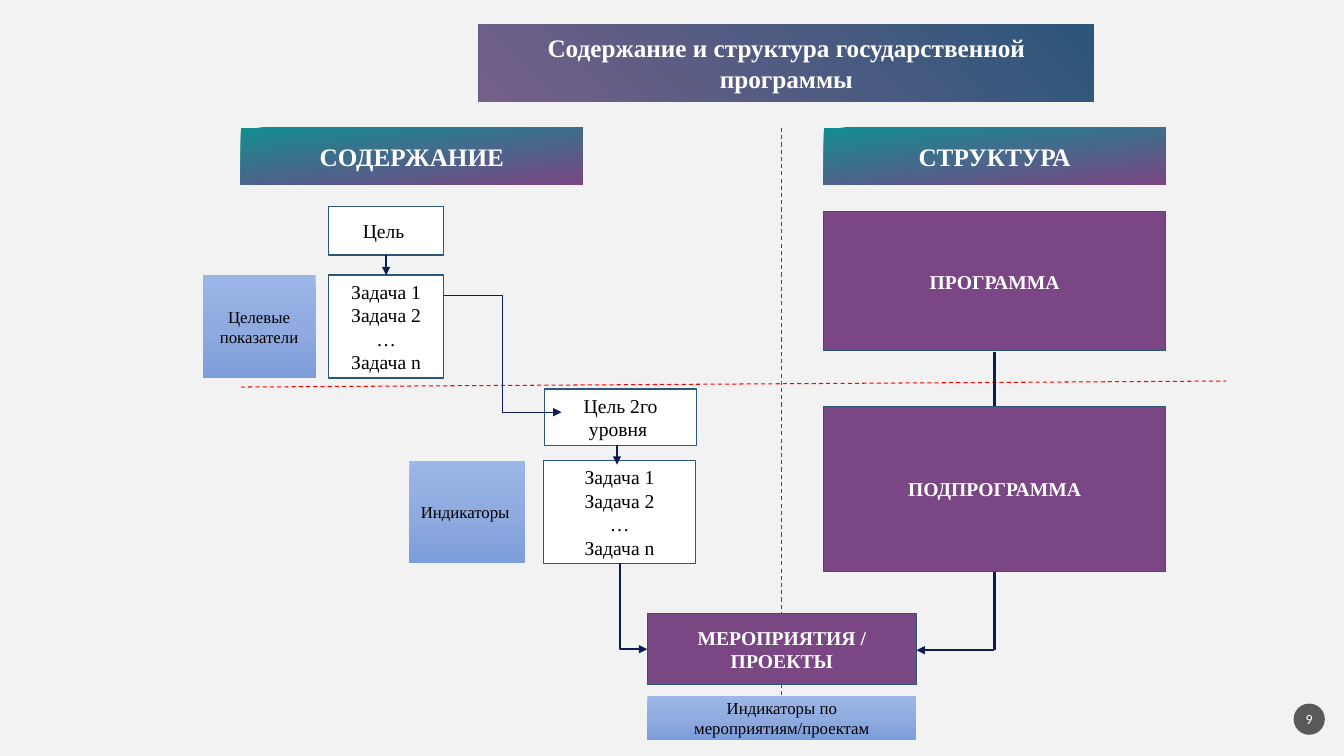
from pptx import Presentation
from pptx import util as u
from pptx.dml.color import RGBColor
from pptx.enum import dml, shapes, text
from pptx.oxml import parse_xml
from pptx.oxml.ns import nsdecls, qn

PX = u.Inches(1) // 100

WHITE = RGBColor(0xFF, 0xFF, 0xFF)
BLACK = RGBColor(0x00, 0x00, 0x00)
PAPER = RGBColor(0xF2, 0xF2, 0xF2)
GREY = RGBColor(0x59, 0x59, 0x59)
RED = RGBColor(0xFF, 0x00, 0x00)
NAVY = RGBColor(0x0D, 0x1D, 0x51)
BLUE = RGBColor(0x2C, 0x56, 0x7A)
PURPLE = RGBColor(0x7A, 0x46, 0x84)
MAUVE = RGBColor(0x74, 0x60, 0x89)
TEAL = RGBColor(0x12, 0x8C, 0x91)
SKY = [RGBColor(0x9D, 0xB6, 0xE8), RGBColor(0x90, 0xAB, 0xDF), RGBColor(0x7C, 0x9E, 0xDB)]

SERIF = "Times New Roman"
HEADING = dict(size=18, color=WHITE, bold=True)
BLOCK = dict(fill=PURPLE, outline=0.5, color=WHITE, bold=True)
TASKS = ["Задача 1", "Задача 2", "…", "Задача n"]


def linear(angle):
    return f'<a:lin ang="{angle * 60000}" scaled="0"/>'


# Gradient: colours at equal steps, plus the direction element
HEADING_FILL = ([TEAL, PURPLE], linear(83))
SKY_FILL = (SKY, linear(90))
TITLE_FILL = ([MAUVE, BLUE],
              '<a:path path="circle"><a:fillToRect t="100000" r="100000"/></a:path>')


def paint(shape, fill):
    if isinstance(fill, RGBColor):
        shape.fill.solid()
        shape.fill.fore_color.rgb = fill
        return
    colors, direction = fill
    stops = "".join(
        f'<a:gs pos="{100000 * i // (len(colors) - 1)}"><a:srgbClr val="{color}"/></a:gs>'
        for i, color in enumerate(colors))
    shape.fill.gradient()
    plain = shape._element.spPr.find(qn("a:gradFill"))
    plain.getparent().replace(plain, parse_xml(
        f'<a:gradFill {nsdecls("a")} rotWithShape="1"><a:gsLst>{stops}</a:gsLst>'
        f'{direction}</a:gradFill>'))


def add_box(page, place, lines, fill=WHITE, outline=0, size=14, color=BLACK,
            bold=False, font=SERIF, kind=shapes.MSO_SHAPE.RECTANGLE, inset=None):
    box = page.shapes.add_shape(kind, *(n * PX for n in place))
    box.shadow.inherit = False
    paint(box, fill)
    if outline:
        box.line.color.rgb = BLUE
        box.line.width = u.Pt(outline)
    else:
        box.line.fill.background()
    frame = box.text_frame
    frame.word_wrap = True
    frame.vertical_anchor = text.MSO_ANCHOR.MIDDLE
    if inset is not None:
        frame.margin_left = frame.margin_right = inset
        frame.margin_top = frame.margin_bottom = inset
    for i, line in enumerate(lines):
        para = frame.add_paragraph() if i else frame.paragraphs[0]
        para.text = line
        para.alignment = text.PP_ALIGN.CENTER
        para.font.name = font
        para.font.size = u.Pt(size)
        para.font.bold = bold
        para.font.color.rgb = color


def add_line(page, start, end, color=NAVY, width=1, arrow=True, dashed=False,
             kind=shapes.MSO_CONNECTOR.STRAIGHT):
    line = page.shapes.add_connector(kind, *(n * PX for n in (*start, *end)))
    line.line.color.rgb = color
    line.line.width = u.Pt(width)
    if dashed:
        line.line.dash_style = dml.MSO_LINE.DASH
    properties = line._element.spPr
    if arrow:
        properties.find(qn("a:ln")).append(
            parse_xml(f'<a:tailEnd {nsdecls("a")} type="triangle"/>'))
    properties.append(parse_xml(f'<a:effectLst {nsdecls("a")}/>'))
    return line


def add_guides(page, left, top, width, height):
    """Dashed lines that split the page into four."""
    guide = dict(color=RED, width=0.75, arrow=False, dashed=True)
    add_line(page, (left + 536, top), (left + 536, top + height), **guide)
    add_line(page, (left, top + 257), (left + width, top + 251), **guide)


def add_title(page, *place):
    add_box(page, place, ["Содержание и структура государственной программы"],
            TITLE_FILL, **HEADING)


def add_content(page, left, top, width):
    """Goals and tasks on two levels, with their measures."""
    add_box(page, (left + 38, top, width, 56), ["СОДЕРЖАНИЕ"], HEADING_FILL, **HEADING)

    # First level
    add_box(page, (left + 125, top + 78, 114, 48), ["Цель "], outline=1)
    add_box(page, (left + 125, top + 146, 114, 102), TASKS, outline=1)
    add_box(page, (left, top + 146, 112, 102), ["Целевые показатели"], SKY_FILL, size=12)
    add_line(page, (left + 182, top + 126), (left + 182, top + 146))

    # Second level
    add_box(page, (left + 339, top + 259, 151, 56), ["Цель 2го уровня "], outline=1)
    add_box(page, (left + 338, top + 330, 151, 102), TASKS, outline=1)
    add_box(page, (left + 205, top + 330, 115, 102), ["Индикаторы "], SKY_FILL, size=12)
    add_line(page, (left + 411, top + 314), (left + 411, top + 334))
    add_line(page, (left + 239, top + 166), (left + 356, top + 282),
             kind=shapes.MSO_CONNECTOR.ELBOW)


def add_structure(page, left, top, width):
    """Programme and subprogramme on one trunk line."""
    middle = left + 169
    add_line(page, (middle, top + 222), (middle, top + 518), width=2, arrow=False)
    add_box(page, (left, top, width, 56), ["СТРУКТУРА"], HEADING_FILL, **HEADING)
    add_box(page, (left, top + 83, width, 138), ["ПРОГРАММА"], **BLOCK)
    add_box(page, (left, top + 276, width, 164), ["ПОДПРОГРАММА"], **BLOCK)


def add_activities(page, left, top, width):
    """Activities, where both columns meet."""
    add_box(page, (left, top, width, 70), ["МЕРОПРИЯТИЯ / ПРОЕКТЫ"], **BLOCK)
    add_box(page, (left, top + 82, width, 43), ["Индикаторы по мероприятиям/проектам"],
            SKY_FILL, size=12)
    add_line(page, (left + 344, top + 36), (left + width, top + 36))

    # One-bend arrow: down from the tasks, then right
    bend = add_line(page, (left + 29, top - 21), (left - 56, top + 6),
                    kind=shapes.MSO_CONNECTOR.ELBOW)
    bend._element.spPr.find(qn("a:prstGeom")).set("prst", "bentConnector2")
    bend._element.spPr.find(qn("a:xfrm")).set("rot", str(270 * 60000))


def add_page_number(page, *place):
    add_box(page, place, ["9"], GREY, size=10, color=WHITE, font="Calibri",
            kind=shapes.MSO_SHAPE.OVAL, inset=0)


def main():
    deck = Presentation()
    deck.slide_width, deck.slide_height = 1333 * PX, 750 * PX
    page = deck.slides.add_slide(deck.slide_layouts[6])
    page.background.fill.solid()
    page.background.fill.fore_color.rgb = PAPER

    add_guides(page, 239, 127, 977, 607)
    add_title(page, 475, 24, 610, 77)
    add_content(page, 201, 127, 339)
    add_structure(page, 817, 127, 339)
    add_activities(page, 642, 609, 267)
    add_page_number(page, 1283, 698, 31, 31)
    deck.save("out.pptx")


if __name__ == "__main__":
    main()
